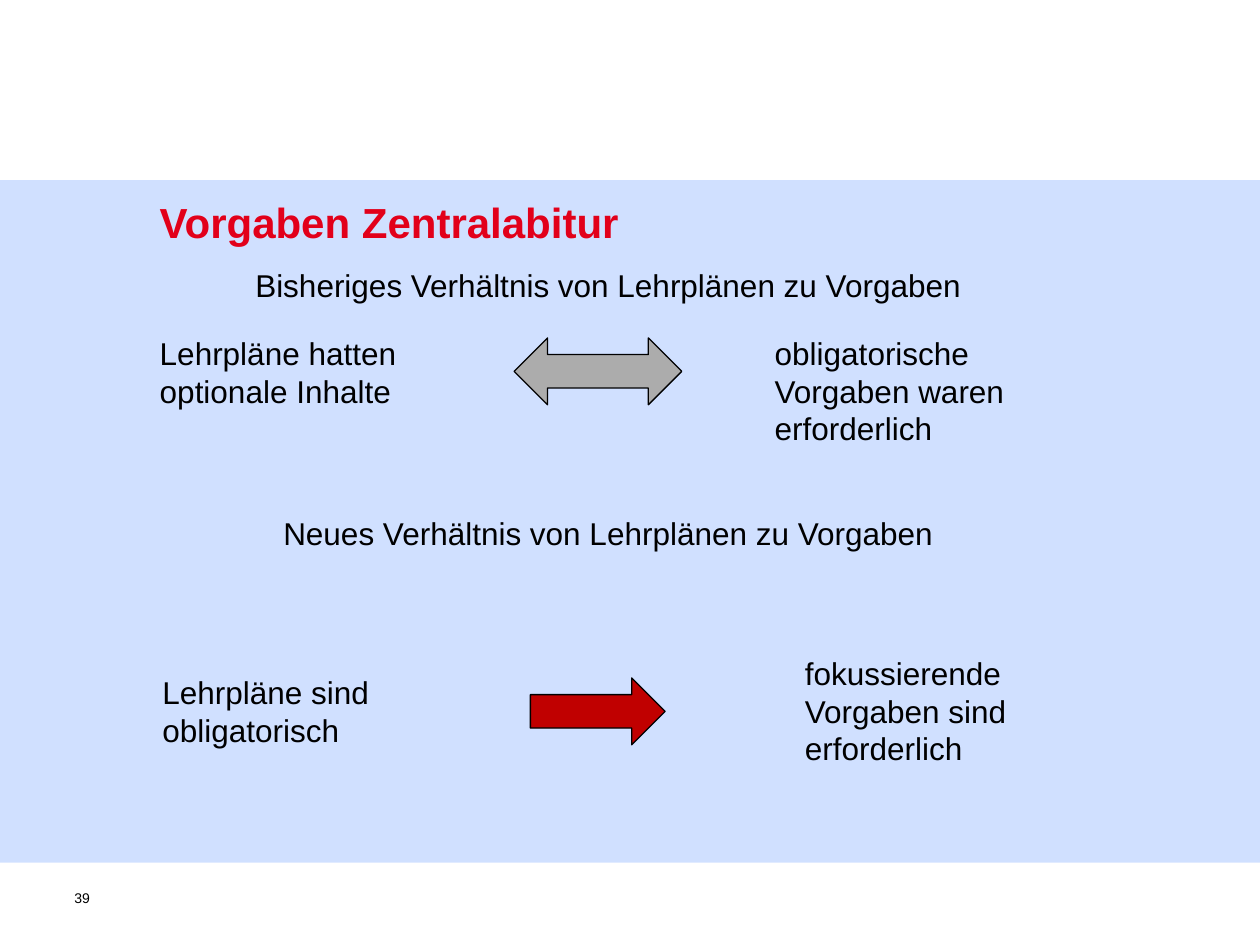
"""Build the slide on curricula and requirements for the Zentralabitur."""
from lxml import etree
from pptx import Presentation
from pptx.dml.color import RGBColor
from pptx.enum.shapes import MSO_SHAPE
from pptx.enum.text import PP_ALIGN
from pptx.oxml.ns import qn
from pptx.util import Pt

LEFT, CENTER = PP_ALIGN.LEFT, PP_ALIGN.CENTER
RECTANGLE = MSO_SHAPE.RECTANGLE
BOTH_WAYS, ONE_WAY = MSO_SHAPE.LEFT_RIGHT_ARROW, MSO_SHAPE.RIGHT_ARROW

BAND = (0, 103, 720, 390)
PAGE_NUMBER = ("39", (42.5, 508.3, 23, 26.6))
TITLE = ("Vorgaben Zentralabitur", (84.2, 108.7, 674, 36))
HEADINGS = [
    ("Bisheriges Verhältnis von Lehrplänen zu Vorgaben", (67, 148.3, 561, 29), CENTER),
    ("Neues Verhältnis von Lehrplänen zu Vorgaben", (154.8, 290.2, 448, 29), LEFT),
]
STATEMENTS = [
    ("Lehrpläne hatten optionale Inhalte", (84.2, 187.2, 164.2, 51)),
    ("obligatorische Vorgaben waren erforderlich", (435.6, 187.2, 152.6, 73)),
    ("Lehrpläne sind\nobligatorisch", (85.7, 381.2, 138.2, 51)),
    ("fokussierende Vorgaben sind erforderlich", (452.9, 370.1, 187.2, 73)),
]
ARROWS = [
    (BOTH_WAYS, (293.8, 193.1, 95.8, 38.2), "ACACAC"),
    (ONE_WAY, (303.1, 387.4, 77, 38.2), "C00000"),
]


def color(value):
    return RGBColor.from_string(value)


def add_text(slide, text, place, size=18, ink="000000", bold=False, align=LEFT, inset=(7.2, 3.6)):
    frame = slide.shapes.add_textbox(*map(Pt, place)).text_frame
    frame.word_wrap = True
    frame.margin_left = frame.margin_right = Pt(inset[0])
    frame.margin_top = frame.margin_bottom = Pt(inset[1])
    frame.text = text
    for paragraph in frame.paragraphs:
        paragraph.alignment = align
        font = paragraph.font
        font.name, font.size, font.bold = "Arial", Pt(size), bold
        font.color.rgb = color(ink)


def add_figure(slide, preset, place, fill, outline=None, opacity=100):
    figure = slide.shapes.add_shape(preset, *map(Pt, place))
    figure.shadow.inherit = False
    figure.fill.solid()
    figure.fill.fore_color.rgb = color(fill)
    if opacity < 100:
        tint = figure.fill._xPr.find(".//" + qn("a:srgbClr"))
        etree.SubElement(tint, qn("a:alpha"), val=str(opacity * 1000))
    if outline:
        figure.line.color.rgb = color(outline)
        figure.line.width = Pt(0.75)
    else:
        figure.line.fill.background()


def main():
    deck = Presentation()
    deck.slide_width, deck.slide_height = Pt(720), Pt(540)
    slide = deck.slides.add_slide(deck.slide_layouts[6])
    add_figure(slide, RECTANGLE, BAND, "6699FF", opacity=30)
    add_text(slide, *TITLE, size=24, ink="E2001A", bold=True)
    for heading, place, align in HEADINGS:
        add_text(slide, heading, place, align=align)
    for statement, place in STATEMENTS:
        add_text(slide, statement, place)
    for preset, place, fill in ARROWS:
        add_figure(slide, preset, place, fill, outline="000000")
    add_text(slide, *PAGE_NUMBER, size=8, inset=(0, 0))
    deck.save("out.pptx")


if __name__ == "__main__":
    main()
